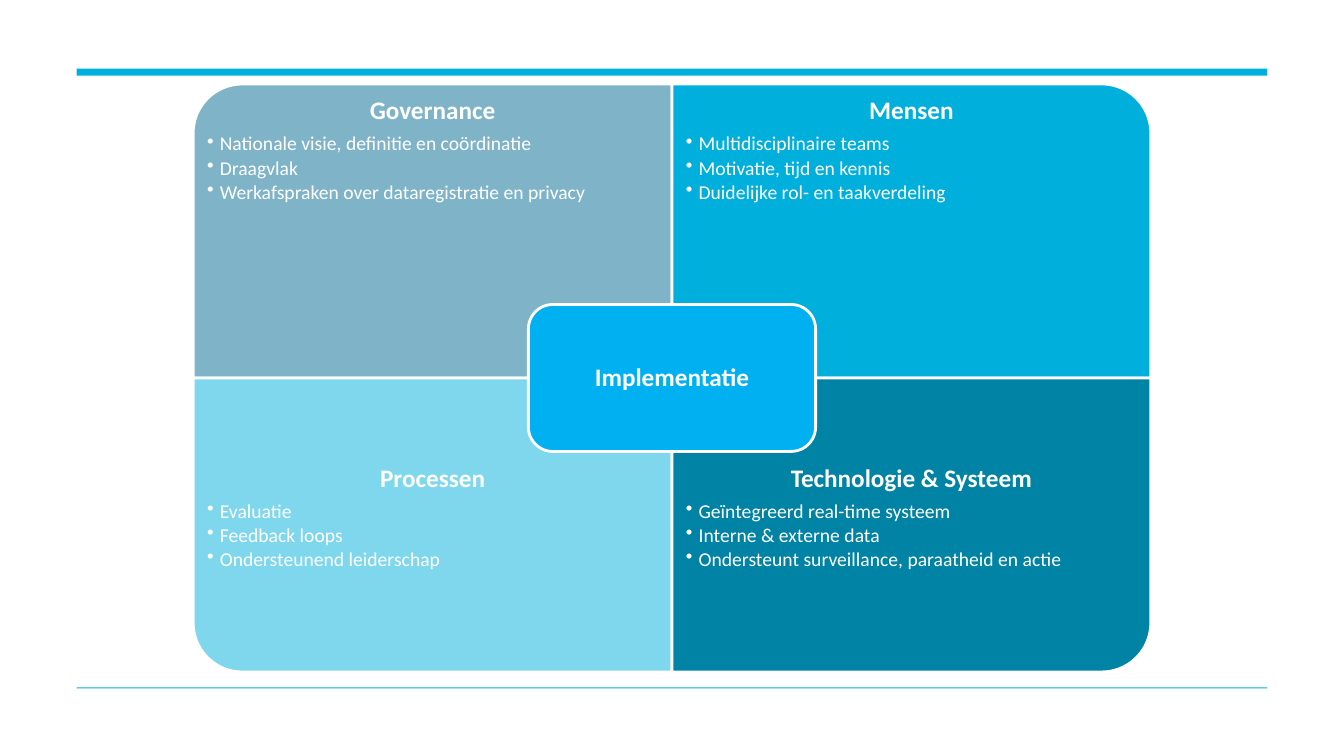
from dataclasses import dataclass

from lxml import etree
from pptx import Presentation
from pptx.dml.color import RGBColor
from pptx.enum import shapes as s, text as t
from pptx.oxml import ns
from pptx.util import Pt

COLOURS = {
    "white": "FFFFFF",
    "rule": "00AFDC",
    "governance": "7FB4C8",
    "people": "00AFDC",
    "processes": "7FD7ED",
    "technology": "0083A5",
    "implementation": "00B0F0",
}
FONT = "Calibri"
CENTRE_X, CENTRE_Y = 480, 270
QUADRANT_W, QUADRANT_H = 342, 210
TEXT_H = QUADRANT_H * 0.75
CORE_W, CORE_H = 205.2, 105
RULE_X, RULE_W = 54.75, 850.5


@dataclass(frozen=True)
class Quadrant:
    column: int
    row: int
    rotation: int
    colour: str
    heading: str
    points: tuple[str, ...]


@dataclass(frozen=True)
class Rule:
    top: float
    height: float


RULES = [Rule(49, 5), Rule(491, 0.75)]
QUADRANTS = [
    Quadrant(0, 0, 270, "governance", "Governance", (
        "Nationale visie, definitie en coördinatie",
        "Draagvlak",
        "Werkafspraken over dataregistratie en privacy",
    )),
    Quadrant(1, 0, 0, "people", "Mensen", (
        "Multidisciplinaire teams",
        "Motivatie, tijd en kennis",
        "Duidelijke rol- en taakverdeling",
    )),
    Quadrant(0, 1, 180, "processes", "Processen", (
        "Evaluatie",
        "Feedback loops",
        "Ondersteunend leiderschap",
    )),
    Quadrant(1, 1, 90, "technology", "Technologie & Systeem", (
        "Geïntegreerd real-time systeem",
        "Interne & externe data",
        "Ondersteunt surveillance, paraatheid en actie",
    )),
]


def rgb(name: str) -> RGBColor:
    return RGBColor.from_string(COLOURS[name])


def add_panel(slide, kind, left: float, top: float, width: float, height: float,
              colour: str, outlined: bool = True):
    panel = slide.shapes.add_shape(kind, Pt(left), Pt(top), Pt(width), Pt(height))
    panel.shadow.inherit = False
    panel.fill.solid()
    panel.fill.fore_color.rgb = rgb(colour)
    if outlined:
        panel.line.color.rgb = rgb("white")
        panel.line.width = Pt(2)
    else:
        panel.line.fill.background()
    return panel


def set_margins(frame, margin: float) -> None:
    frame.word_wrap = True
    frame.margin_left = frame.margin_right = Pt(margin)
    frame.margin_top = frame.margin_bottom = Pt(margin)


def format_paragraph(paragraph, size: float, bold: bool, space_after: float) -> None:
    paragraph.line_spacing = 0.9
    paragraph.space_after = Pt(space_after)
    for run in paragraph.runs:
        run.font.name = FONT
        run.font.size = Pt(size)
        run.font.bold = bold
        run.font.color.rgb = rgb("white")


def format_heading(paragraph) -> None:
    paragraph.alignment = t.PP_ALIGN.CENTER
    format_paragraph(paragraph, 18, True, 6.3)


def format_bullet(paragraph) -> None:
    paragraph.level = 1
    paragraph.alignment = t.PP_ALIGN.LEFT
    properties = paragraph._p.get_or_add_pPr()
    properties.set("marL", str(Pt(9)))
    properties.set("indent", str(Pt(-9)))
    etree.SubElement(properties, ns.qn("a:buChar"), char="•")
    format_paragraph(paragraph, 14, False, 2.1)


def add_quadrant(slide, quadrant: Quadrant) -> None:
    """Turn the one rounded corner outwards and lay upright text over it."""
    left = CENTRE_X + (quadrant.column - 1) * QUADRANT_W
    top = CENTRE_Y + (quadrant.row - 1) * QUADRANT_H
    width, height = QUADRANT_W, QUADRANT_H
    if quadrant.rotation % 180:
        width, height = height, width
    panel = add_panel(slide, s.MSO_SHAPE.ROUND_1_RECTANGLE,
                      left + (QUADRANT_W - width) / 2, top + (QUADRANT_H - height) / 2,
                      width, height, quadrant.colour)
    panel.rotation = quadrant.rotation

    text_top = top + quadrant.row * (QUADRANT_H - TEXT_H)
    frame = slide.shapes.add_textbox(
        Pt(left), Pt(text_top), Pt(QUADRANT_W), Pt(TEXT_H)).text_frame
    set_margins(frame, 10)
    frame.text = "\n".join((quadrant.heading, *quadrant.points))
    heading, *bullets = frame.paragraphs
    format_heading(heading)
    for bullet in bullets:
        format_bullet(bullet)


def add_core(slide) -> None:
    core = add_panel(slide, s.MSO_SHAPE.ROUNDED_RECTANGLE,
                     CENTRE_X - CORE_W / 2, CENTRE_Y - CORE_H / 2,
                     CORE_W, CORE_H, "implementation")
    frame = core.text_frame
    set_margins(frame, 5)
    frame.vertical_anchor = t.MSO_ANCHOR.MIDDLE
    frame.text = "Implementatie"
    format_heading(frame.paragraphs[0])


def main() -> None:
    presentation = Presentation()
    presentation.slide_width, presentation.slide_height = Pt(960), Pt(540)
    slide = presentation.slides.add_slide(presentation.slide_layouts[6])
    for rule in RULES:
        add_panel(slide, s.MSO_SHAPE.RECTANGLE, RULE_X, rule.top,
                  RULE_W, rule.height, "rule", outlined=False)
    for quadrant in QUADRANTS:
        add_quadrant(slide, quadrant)
    add_core(slide)
    presentation.save("out.pptx")


if __name__ == "__main__":
    main()
